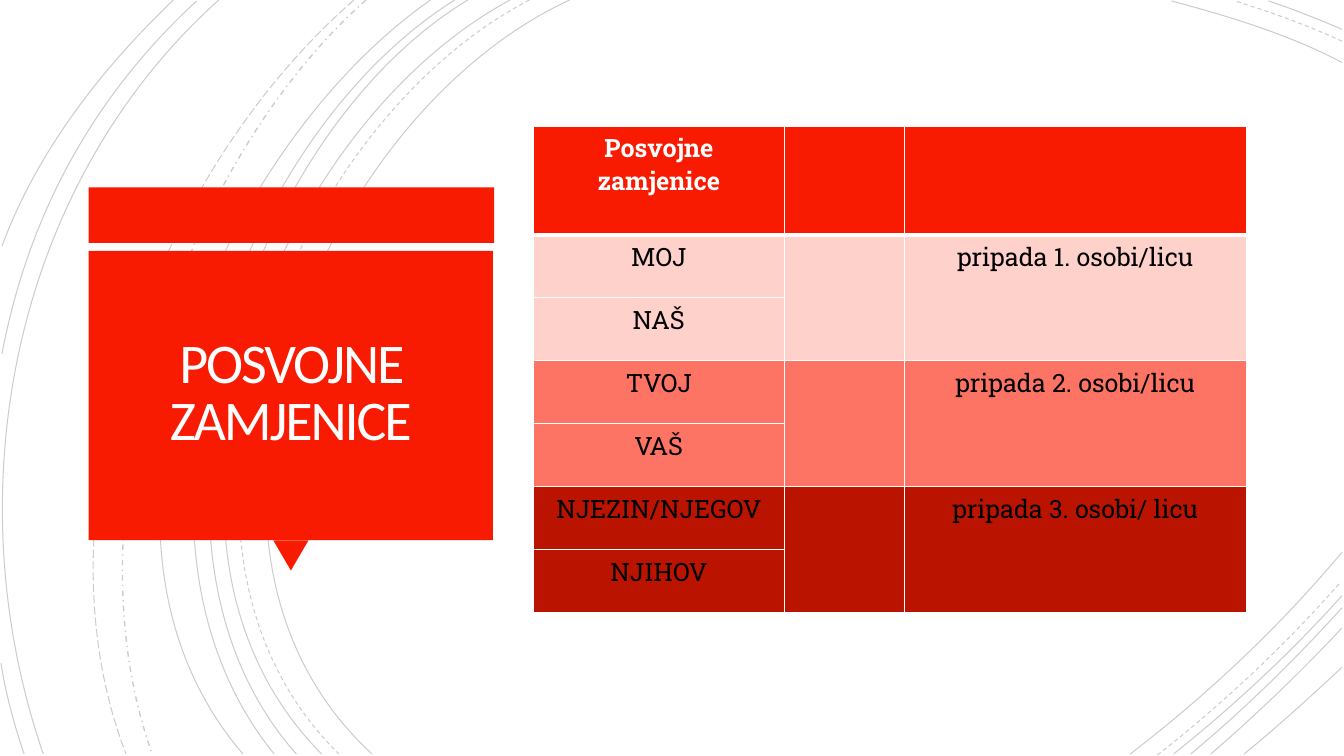
from dataclasses import dataclass

from lxml import etree
from pptx import Presentation
from pptx.dml.color import RGBColor
from pptx.enum.dml import MSO_LINE
from pptx.enum.shapes import MSO_SHAPE
from pptx.enum.text import MSO_ANCHOR, PP_ALIGN
from pptx.oxml.ns import qn
from pptx.util import Inches, Pt

SOLID, DASH = MSO_LINE.SOLID, MSO_LINE.DASH
DASH_DOT, LONG_DASH = MSO_LINE.DASH_DOT, MSO_LINE.LONG_DASH
RECTANGLE, TRIANGLE = MSO_SHAPE.RECTANGLE, MSO_SHAPE.ISOSCELES_TRIANGLE
CENTER, MIDDLE = PP_ALIGN.CENTER, MSO_ANCHOR.MIDDLE

GRID_CELL = Inches(1)
GRID_COLUMNS, GRID_ROWS = 13.33, 7.5


@dataclass(frozen=True)
class Theme:
    """Colours, fonts and type sizes of the slide."""
    accent: str = "F81B02"
    title_text: str = "FFFEFF"
    header_text: str = "FFFFFF"
    body_text: str = "000000"
    border: str = "FFFFFF"
    arc: str = "000000"
    arc_opacity: int = 20
    title_font: str = "Calibri"
    table_font: str = "Roboto Slab"
    title_size: float = 40
    table_size: float = 18
    title_spacing: float = -1.5
    border_width: float = 1
    header_border_width: float = 3


THEME = Theme()

ARCS = [
    (SOLID, 0.75, (5.65, 0), (3.15, 1.15), (1.43, 5.4), (3.69, 7.48)),
    (SOLID, 0.75, (13.31, 0.62), (12.78, 0.34), (12.18, 0.16), (11.62, 0.01)),
    (SOLID, 0.75, (11.21, 7.48), (11.97, 6.9), (12.69, 6.22), (13.31, 5.48)),
    (DASH, 0.75, (5.25, 0), (2.85, 1.25), (1.23, 5.37), (3.36, 7.48)),
    (DASH, 0.75, (13.31, 0.41), (12.97, 0.25), (12.6, 0.12), (12.25, 0.01)),
    (DASH, 0.75, (11.48, 7.49), (12.13, 6.98), (12.75, 6.4), (13.3, 5.77)),
    (SOLID, 0.75, (5.06, 0), (2.7, 1.27), (1.1, 5.37), (3.19, 7.48)),
    (SOLID, 0.75, (13.31, 0.29), (13.07, 0.19), (12.83, 0.09), (12.58, 0.01)),
    (SOLID, 0.75, (11.64, 7.48), (12.23, 7.01), (12.8, 6.48), (13.31, 5.91)),
    (SOLID, 0.75, (4.64, 0), (2.44, 1.33), (1.1, 5.41), (2.94, 7.48)),
    (SOLID, 0.75, (11.81, 7.48), (12.34, 7.04), (12.84, 6.55), (13.31, 6.03)),
    (SOLID, 0.75, (4.51, 0), (2.31, 1.38), (0.97, 5.33), (2.72, 7.48)),
    (SOLID, 0.75, (12.01, 7.48), (12.46, 7.09), (12.9, 6.67), (13.31, 6.23)),
    (SOLID, 0.75, (4.27, 0), (2.17, 1.47), (0.53, 5.29), (2.41, 7.48)),
    (SOLID, 0.75, (12.34, 7.48), (12.67, 7.21), (12.99, 6.92), (13.31, 6.62)),
    (DASH_DOT, 1, (3.63, 0), (1.76, 1.66), (0.65, 5.09), (1.51, 7.48)),
    (LONG_DASH, 0.75, (3.51, 0), (1.57, 1.69), (0.29, 4.99), (1.25, 7.48)),
    (SOLID, 0.75, (2.17, 0), (0.11, 1.85), (-0.46, 4.9), (0.43, 7.48)),
    (SOLID, 0.75, (1.95, 0.01), (0.92, 0.96), (0.28, 2.14), (0.02, 3.51)),
    (SOLID, 0.75, (0.01, 6.58), (0.06, 6.89), (0.14, 7.19), (0.24, 7.48)),
    (SOLID, 0.75, (1.72, 0), (1, 0.69), (0.37, 1.5), (0.02, 2.44)),
]

PERSON_GROUPS = [
    ("FFD1CB", ("MOJ", "NAŠ"), "pripada 1. osobi/licu"),
    ("FE7464", ("TVOJ", "VAŠ"), "pripada 2. osobi/licu"),
    ("BA1401", ("NJEZIN/NJEGOV", "NJIHOV"), "pripada 3. osobi/ licu"),
]
TABLE_COLUMNS = (2.49, 1.19, 3.39)
TABLE_HEIGHT, HEADER_HEIGHT = 4.83, 1.08


def grid(*cells):
    """Turn grid counts into slide lengths."""
    return [round(cell * GRID_CELL) for cell in cells]


def bend_outline(shape):
    """Join the three segments of an outline into one cubic curve."""
    segments = list(shape.element.spPr.iter(qn("a:lnTo")))
    outline = segments[0].getparent()
    curve = etree.SubElement(outline, qn("a:cubicBezTo"))
    for segment in segments:
        curve.extend(list(segment))
        outline.remove(segment)


def add_arc(slide, dash, width, *controls):
    """Draw one faint background arc."""
    points = [grid(*control) for control in controls]
    builder = slide.shapes.build_freeform(*points[0])
    builder.add_line_segments(points[1:], close=False)
    shape = builder.convert_to_shape()
    bend_outline(shape)
    shape.shadow.inherit = False
    shape.fill.background()
    shape.line.width = Pt(width)
    shape.line.color.rgb = RGBColor.from_string(THEME.arc)
    shape.line.dash_style = dash
    for color in shape.element.spPr.iter(qn("a:srgbClr")):
        etree.SubElement(color, qn("a:alpha"), val=str(THEME.arc_opacity * 1000))


def add_panel(slide, kind, box, rotation=0):
    """Draw one plain accent shape."""
    shape = slide.shapes.add_shape(kind, *grid(*box))
    shape.shadow.inherit = False
    shape.fill.solid()
    shape.fill.fore_color.rgb = RGBColor.from_string(THEME.accent)
    shape.line.fill.background()
    shape.rotation = rotation


def style_paragraph(paragraph, font_name, size, color, bold=False):
    """Centre a paragraph and set its font."""
    paragraph.alignment = CENTER
    paragraph.font.name = font_name
    paragraph.font.size = Pt(size)
    paragraph.font.bold = bold
    paragraph.font.color.rgb = RGBColor.from_string(color)


def add_title(slide, text, box):
    """Write the title over its panel."""
    frame = slide.shapes.add_textbox(*grid(*box)).text_frame
    frame.word_wrap = True
    frame.vertical_anchor = MIDDLE
    frame.margin_left = frame.margin_right = Inches(0.25)
    frame.margin_top = frame.margin_bottom = Inches(0.25)
    paragraph = frame.paragraphs[0]
    run = paragraph.add_run()
    run.text = text
    paragraph.line_spacing = 0.85
    style_paragraph(paragraph, THEME.title_font, THEME.title_size, THEME.title_text)
    run.font._element.set("spc", str(round(THEME.title_spacing * 100)))


def set_borders(cell, top, bottom):
    """Give a cell its four borders."""
    properties = cell._tc.get_or_add_tcPr()
    widths = {"L": THEME.border_width, "R": THEME.border_width, "T": top, "B": bottom}
    for side, width in widths.items():
        line = etree.SubElement(properties, qn(f"a:ln{side}"), w=str(Pt(width)))
        fill = etree.SubElement(line, qn("a:solidFill"))
        etree.SubElement(fill, qn("a:srgbClr"), val=THEME.border)


def fill_cell(cell, text, color, is_header, top, bottom):
    """Set the text, borders and fill of one cell."""
    cell.text = text
    text_color = THEME.header_text if is_header else THEME.body_text
    style_paragraph(cell.text_frame.paragraphs[0], THEME.table_font,
                    THEME.table_size, text_color, is_header)
    set_borders(cell, top, bottom)
    cell.fill.solid()
    cell.fill.fore_color.rgb = RGBColor.from_string(color)


def add_pronoun_table(slide, left, top):
    """Build the table of pronouns grouped by person."""
    rows = [(THEME.accent, "Posvojne zamjenice", "")]
    for color, (singular, plural), owner in PERSON_GROUPS:
        rows += [(color, singular, owner), (color, plural, "")]
    body_count = len(rows) - 1
    heights = [HEADER_HEIGHT] + [(TABLE_HEIGHT - HEADER_HEIGHT) / body_count] * body_count
    box = grid(left, top, sum(TABLE_COLUMNS), TABLE_HEIGHT)
    table = slide.shapes.add_table(len(rows), len(TABLE_COLUMNS), *box).table
    table.horz_banding = False
    for column, width in zip(table.columns, grid(*TABLE_COLUMNS)):
        column.width = width
    for row, height in zip(table.rows, grid(*heights)):
        row.height = height
    for index, (color, pronoun, owner) in enumerate(rows):
        upper = THEME.header_border_width if index == 1 else THEME.border_width
        lower = THEME.header_border_width if index == 0 else THEME.border_width
        for position, text in enumerate((pronoun, "", owner)):
            fill_cell(table.cell(index, position), text, color, index == 0, upper, lower)
    for first in range(1, len(rows), 2):
        for position in (1, 2):
            table.cell(first, position).merge(table.cell(first + 1, position))


def main():
    """Build and save the slide."""
    presentation = Presentation()
    presentation.slide_width, presentation.slide_height = grid(GRID_COLUMNS, GRID_ROWS)
    slide = presentation.slides.add_slide(presentation.slide_layouts[6])
    for arc in ARCS:
        add_arc(slide, *arc)
    add_panel(slide, RECTANGLE, (0.88, 1.86, 4.02, 0.55))
    add_panel(slide, TRIANGLE, (2.71, 5.36, 0.35, 0.3), rotation=180)
    add_panel(slide, RECTANGLE, (0.88, 2.49, 4.01, 2.87))
    add_title(slide, "POSVOJNE ZAMJENICE", (0.97, 2.57, 3.83, 2.69))
    add_pronoun_table(slide, 5.29, 1.25)
    presentation.save("out.pptx")


if __name__ == "__main__":
    main()
